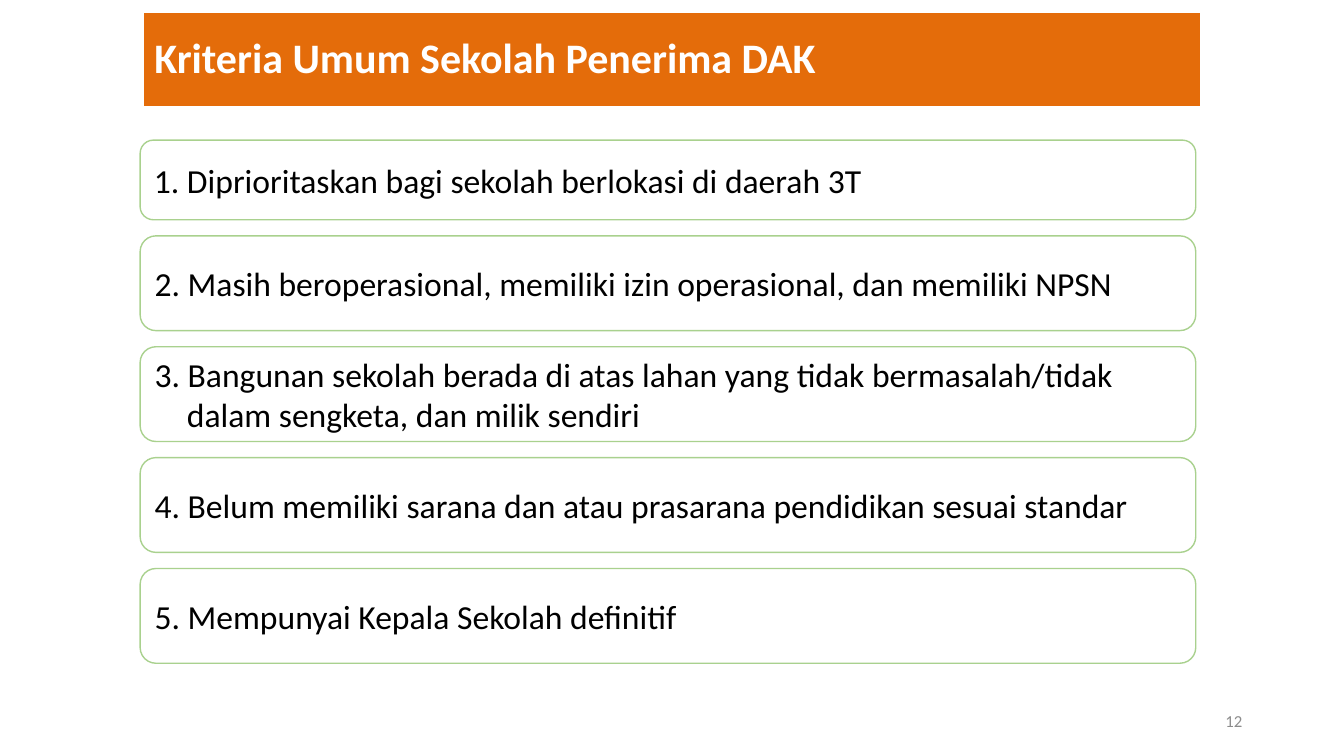
from dataclasses import dataclass

import pptx
import pptx.dml.color
import pptx.enum.shapes
import pptx.enum.text
import pptx.util

PX = 9144  # EMU per px, 100 px to the inch
Align = pptx.enum.text.PP_ALIGN


@dataclass(frozen=True)
class Theme:
    font: str = "Calibri"
    banner: str = "E46C0A"
    banner_text: str = "FFFFFF"
    border: str = "A9D18E"
    body_text: str = "000000"
    number_text: str = "8C8C8C"
    title_size: int = 30
    body_size: int = 24
    number_size: int = 12


@dataclass(frozen=True)
class Criterion:
    text: str
    height: int = 94
    indent: int = 32


THEME = Theme()
LEFT, WIDTH = 139, 1047
FIRST_TOP, GAP = 139, 16
CRITERIA = [
    Criterion("1. Diprioritaskan bagi sekolah berlokasi di daerah 3T", height=79, indent=0),
    Criterion("2. Masih beroperasional, memiliki izin operasional, dan memiliki NPSN"),
    Criterion("3. Bangunan sekolah berada di atas lahan yang tidak bermasalah/tidak "
              "dalam sengketa, dan milik sendiri"),
    Criterion("4. Belum memiliki sarana dan atau prasarana pendidikan sesuai standar"),
    Criterion("5. Mempunyai Kepala Sekolah definitif"),
]


def rgb(value: str) -> pptx.dml.color.RGBColor:
    return pptx.dml.color.RGBColor.from_string(value)


def place(shape, left: int, top: int, width: int, height: int) -> None:
    box = {"left": left, "top": top, "width": width, "height": height}
    for name, value in box.items():
        setattr(shape, name, value * PX)


def write(shape, text: str, size: int, color: str, bold: bool = False,
          align: Align = Align.LEFT):
    """Fill a shape with one formatted paragraph and return that paragraph."""
    frame = shape.text_frame
    frame_format = {
        "word_wrap": True,
        "auto_size": pptx.enum.text.MSO_AUTO_SIZE.NONE,
        "vertical_anchor": pptx.enum.text.MSO_ANCHOR.MIDDLE,
    }
    for name, value in frame_format.items():
        setattr(frame, name, value)
    paragraph = frame.paragraphs[0]
    paragraph.alignment = align
    run = paragraph.add_run()
    run.text = text
    font_format = {"name": THEME.font, "size": pptx.util.Pt(size), "bold": bold}
    for name, value in font_format.items():
        setattr(run.font, name, value)
    run.font.color.rgb = rgb(color)
    return paragraph


def add_banner(slide, text: str) -> None:
    title = slide.shapes.title
    place(title, 143, 13, WIDTH, 92)
    title.fill.solid()
    title.fill.fore_color.rgb = rgb(THEME.banner)
    paragraph = write(title, text, THEME.title_size, THEME.banner_text, bold=True)
    paragraph.line_spacing = 0.9


def add_criterion(slide, criterion: Criterion, top: int) -> None:
    shape = slide.shapes.add_shape(
        pptx.enum.shapes.MSO_SHAPE.ROUNDED_RECTANGLE, 0, 0, 0, 0)
    place(shape, LEFT, top, WIDTH, criterion.height)
    shape.shadow.inherit = False
    shape.fill.background()
    shape.line.color.rgb = rgb(THEME.border)
    shape.line.width = pptx.util.Pt(1)
    paragraph = write(shape, criterion.text, THEME.body_size, THEME.body_text)
    # Hanging indent keeps wrapped lines clear of the number
    indent = criterion.indent * PX
    properties = paragraph._p.get_or_add_pPr()
    properties.set("marL", str(indent))
    properties.set("indent", str(-indent))


def add_page_number(slide, number: str) -> None:
    box = slide.shapes.add_textbox(0, 0, 0, 0)
    place(box, 942, 695, 300, 40)
    write(box, number, THEME.number_size, THEME.number_text, align=Align.RIGHT)


def main() -> None:
    presentation = pptx.Presentation()
    presentation.slide_width = 1333 * PX
    presentation.slide_height = 750 * PX
    title_only = presentation.slide_layouts.get_by_name("Title Only")
    slide = presentation.slides.add_slide(title_only)

    # Title banner
    add_banner(slide, "Kriteria Umum Sekolah Penerima DAK")

    # Stack of criteria with equal gaps
    top = FIRST_TOP
    for criterion in CRITERIA:
        add_criterion(slide, criterion, top)
        top += criterion.height + GAP

    # Page number
    add_page_number(slide, "12")
    presentation.save("out.pptx")


if __name__ == "__main__":
    main()
